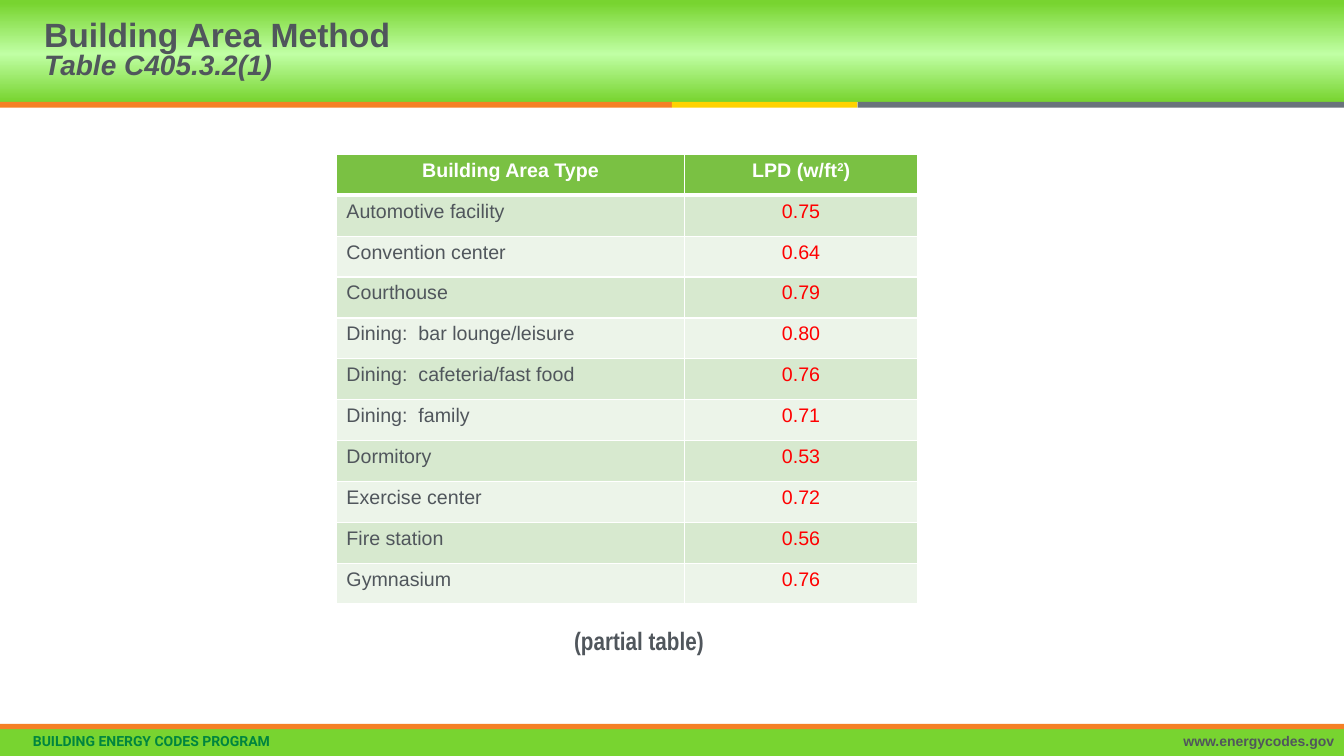
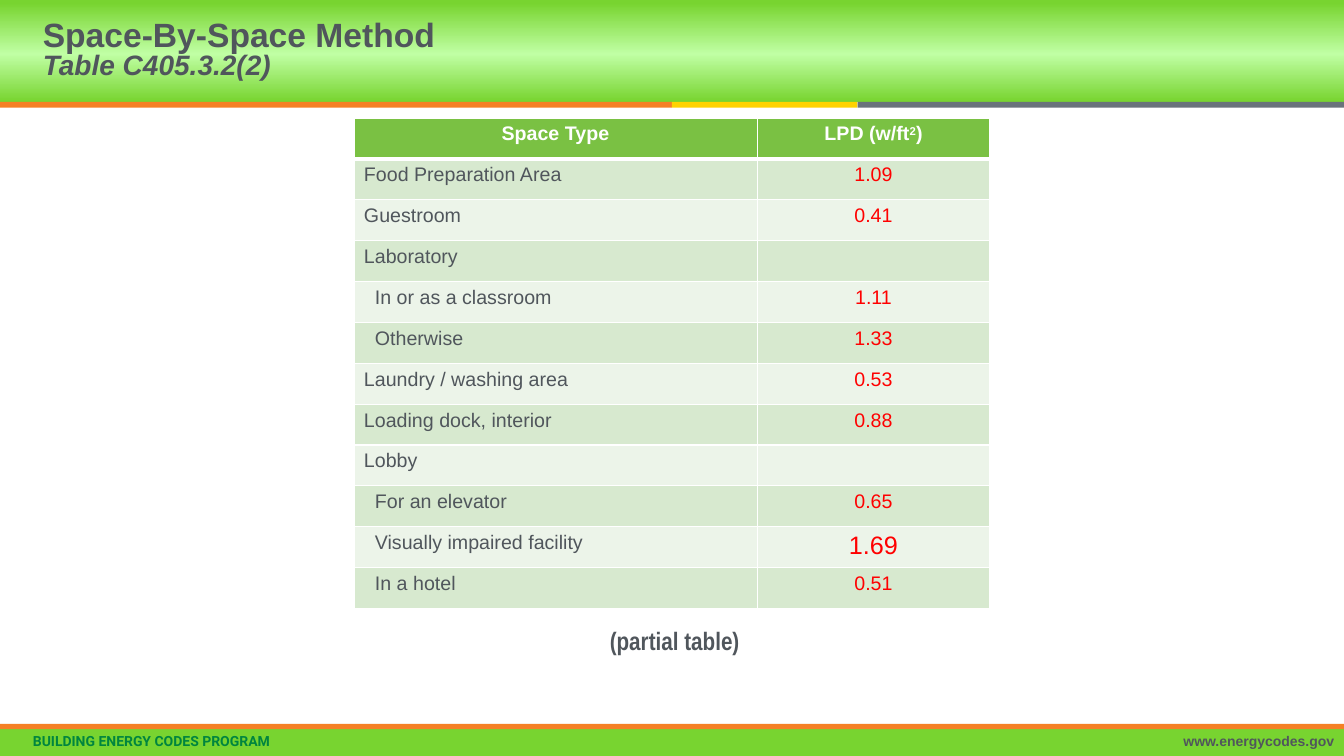
from copy import deepcopy

from lxml import etree
from pptx import Presentation
from pptx import util as u
from pptx.dml import color
from pptx.enum import shapes, text
from pptx.oxml import ns

Pt = u.Pt
LEFT, CENTER, RIGHT = text.PP_ALIGN.LEFT, text.PP_ALIGN.CENTER, text.PP_ALIGN.RIGHT


def rgb(value):
    return color.RGBColor.from_string(value)


class Style:
    WIDTH, HEIGHT = 960, 540
    TEXT, WHITE, RED = "50565C", "FFFFFF", "FF0000"
    GREEN, PALE, ORANGE = "78D430", "C0FFA4", "F58025"
    HEADER, BANDS = "7AC143", ("D7E9CF", "ECF4E9")
    ROW_HEIGHT, VALUE_WIDTH = 29.2, 166.3

    def __init__(self):
        self.deck = Presentation()
        self.deck.slide_width = Pt(self.WIDTH)
        self.deck.slide_height = Pt(self.HEIGHT)
        self.page = None

    def new_page(self, title, subtitle, left):
        self.page = self.deck.slides.add_slide(self.deck.slide_layouts[6])
        self.gradient(self.band(0, 0, self.WIDTH, 72.7, self.GREEN))
        self.band(0, 520.5, self.WIDTH, 19.5, self.GREEN)
        self.band(0, 72.7, 480, 4.3, self.ORANGE)
        self.band(480, 72.7, 132.5, 4.3, "FFD200")
        self.band(612.5, 72.7, 347.5, 4.3, "6A737B")
        self.band(0, 517, self.WIDTH, 3.8, self.ORANGE)
        self.label("BUILDING ENERGY CODES PROGRAM", 16.4, 521.3, 480, 18.7,
                   10, "00853F", "Roboto", spacing=0.9)
        self.label("www.energycodes.gov", 575, 521.3, 385, 18.7,
                   10, align=RIGHT, spacing=0.9)
        self.title(title, subtitle, left)

    def band(self, left, top, width, height, fill):
        shape = self.page.shapes.add_shape(
            shapes.MSO_SHAPE.RECTANGLE, Pt(left), Pt(top), Pt(width), Pt(height))
        shape.shadow.inherit = False
        shape.fill.solid()
        shape.fill.fore_color.rgb = rgb(fill)
        shape.line.fill.background()
        return shape

    def gradient(self, shape):
        shape.fill.gradient()
        shape.fill.gradient_angle = 90
        stops = shape._element.spPr.find(".//" + ns.qn("a:gsLst"))
        stops.append(deepcopy(stops[0]))
        colours = ((0, self.GREEN), (0.47, self.PALE), (0.97, self.GREEN))
        for stop, (position, value) in zip(shape.fill.gradient_stops, colours):
            stop.position = position
            stop.color.rgb = rgb(value)

    def box(self, left, top, width, height):
        box = self.page.shapes.add_textbox(Pt(left), Pt(top), Pt(width), Pt(height))
        box.text_frame.word_wrap = True
        return box.text_frame

    def font(self, para, size, value=TEXT, name="Arial", bold=True):
        para.font.size = Pt(size)
        para.font.name = name
        para.font.bold = bold
        para.font.color.rgb = rgb(value)

    def label(self, words, left, top, width, height, size, value=TEXT,
              name="Arial", align=LEFT, spacing=1.0):
        para = self.box(left, top, width, height).paragraphs[0]
        para.text = words
        para.alignment = align
        para.line_spacing = spacing
        self.font(para, size, value, name)

    def title(self, title, subtitle, left):
        frame = self.box(left, 0, 480, 72.7)
        frame.vertical_anchor = text.MSO_ANCHOR.MIDDLE
        para = frame.paragraphs[0]
        para.line_spacing = 0.8
        self.font(para, 24)
        para.add_run().text = title
        para.add_line_break()
        span = para.add_run()
        span.text = subtitle
        span.font.size = Pt(20)
        span.font.italic = True

    def borders(self, cell, row):
        properties = cell._tc.get_or_add_tcPr()
        widths = {"lnL": 1, "lnR": 1, "lnT": 3 if row == 1 else 1,
                  "lnB": 3 if row == 0 else 1}
        for side, width in widths.items():
            line = etree.SubElement(properties, ns.qn("a:" + side), w=str(Pt(width)))
            fill = etree.SubElement(line, ns.qn("a:solidFill"))
            etree.SubElement(fill, ns.qn("a:srgbClr"), val=self.WHITE)

    def cell(self, cell, row, words, value, align, size=14):
        self.borders(cell, row)
        cell.fill.solid()
        fill = self.BANDS[(row - 1) % 2] if row else self.HEADER
        cell.fill.fore_color.rgb = rgb(fill)
        para = cell.text_frame.paragraphs[0]
        para.alignment = align
        self.font(para, size, value, bold=row == 0)
        before, mark, after = words.partition("²")
        para.add_run().text = before
        if mark:
            span = para.add_run()
            span.text = "2"
            span._r.get_or_add_rPr().set("baseline", "30000")
            para.add_run().text = after

    def table(self, heading, rows, left, top, name_width, indented=(), large=()):
        widths = (name_width, self.VALUE_WIDTH)
        grid = self.page.shapes.add_table(
            len(rows) + 1, 2, Pt(left), Pt(top), Pt(sum(widths)),
            Pt(self.ROW_HEIGHT * (len(rows) + 1))).table
        grid.horz_banding = False
        for column, width in zip(grid.columns, widths):
            column.width = Pt(width)
        for line in grid.rows:
            line.height = Pt(self.ROW_HEIGHT)
        for column, words in enumerate((heading, "LPD (w/ft²)")):
            self.cell(grid.cell(0, column), 0, words, self.WHITE, CENTER)
        for row, (name, density) in enumerate(rows, 1):
            self.cell(grid.cell(row, 0), row, name, self.TEXT, LEFT)
            if name in indented:
                grid.cell(row, 0).margin_left = Pt(15)
            self.cell(grid.cell(row, 1), row, density, self.RED, CENTER,
                      18 if name in large else 14)

    def caption(self, left):
        self.label("(partial table)", left, 443, 230, 25, 18, name="Arial Narrow")


BUILDING_AREAS = (
    ("Automotive facility", "0.75"),
    ("Convention center", "0.64"),
    ("Courthouse", "0.79"),
    ("Dining:  bar lounge/leisure", "0.80"),
    ("Dining:  cafeteria/fast food", "0.76"),
    ("Dining:  family", "0.71"),
    ("Dormitory", "0.53"),
    ("Exercise center", "0.72"),
    ("Fire station", "0.56"),
    ("Gymnasium", "0.76"),
)
SPACES = (
    ("Food Preparation Area", "1.09"),
    ("Guestroom", "0.41"),
    ("Laboratory", ""),
    ("In or as a classroom", "1.11"),
    ("Otherwise", "1.33"),
    ("Laundry / washing area", "0.53"),
    ("Loading dock, interior", "0.88"),
    ("Lobby", ""),
    ("For an elevator", "0.65"),
    ("Visually impaired facility", "1.69"),
    ("In a hotel", "0.51"),
)
SUBSPACES = ("In or as a classroom", "Otherwise", "For an elevator",
             "Visually impaired facility", "In a hotel")


def main():
    style = Style()
    style.new_page("Building Area Method", "Table C405.3.2(1)", 24.5)
    style.table("Building Area Type", BUILDING_AREAS, 240.3, 110.3, 248.8)
    style.caption(403)

    style.new_page("Space-By-Space Method", "Table C405.3.2(2)", 23.5)
    style.table("Space Type", SPACES, 252.8, 84.3, 288,
                indented=SUBSPACES, large=("Visually impaired facility",))
    style.caption(428.5)
    style.deck.save("out.pptx")


if __name__ == "__main__":
    main()
